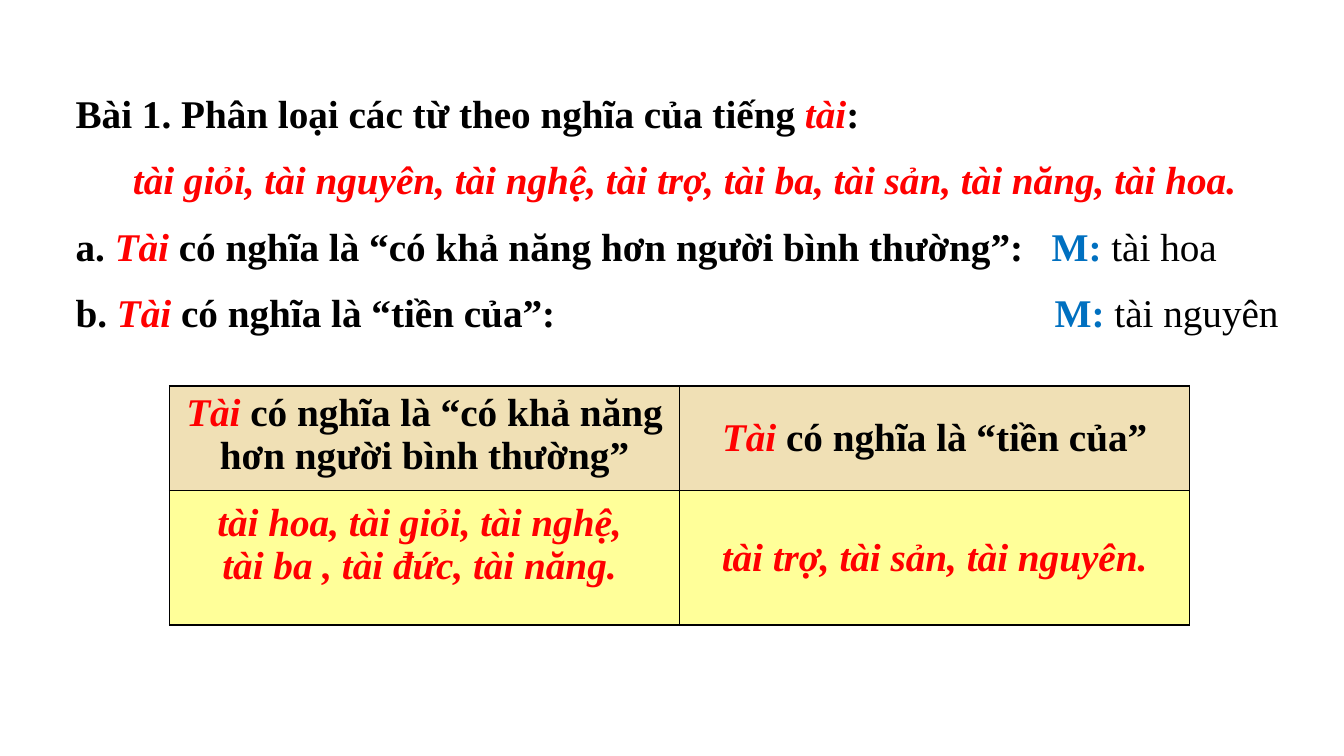
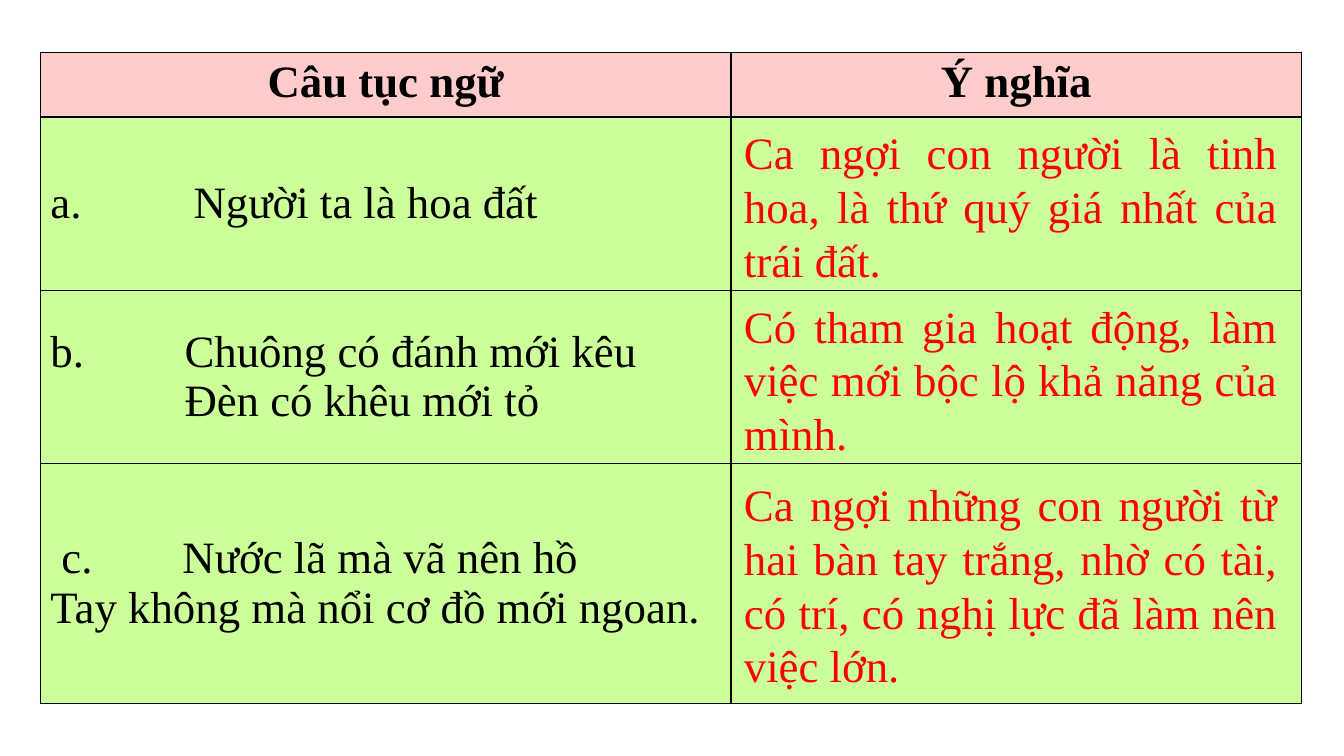
from dataclasses import dataclass

from lxml import etree
from pptx import Presentation
from pptx import util as u
from pptx.dml import color
from pptx.enum import text
from pptx.oxml import ns

EMU_PER_PX = 9144
SLIDE_SIZE = (1333, 750)
FONT = "Times New Roman"
BLACK, RED, BLUE = "000000", "FF0000", "0070C0"
SAND, YELLOW, PINK, GREEN = "F0E0B5", "FFFF99", "FFCCCC", "CCFF99"
LEFT, CENTER, JUSTIFY = text.PP_ALIGN.LEFT, text.PP_ALIGN.CENTER, text.PP_ALIGN.JUSTIFY
TOP, MIDDLE = text.MSO_ANCHOR.TOP, text.MSO_ANCHOR.MIDDLE


@dataclass(frozen=True)
class Run:
    words: str
    color: str = BLACK
    bold: bool = False
    italic: bool = False


@dataclass(frozen=True)
class Line:
    runs: tuple[Run, ...]
    align: text.PP_ALIGN = LEFT
    margin: int = 0
    indent: int = 0
    before: int = 0


@dataclass(frozen=True)
class Cell:
    fill: str
    lines: tuple[Line, ...] = ()
    anchor: text.MSO_ANCHOR = MIDDLE
    bottom: int = 5


@dataclass(frozen=True)
class Meaning:
    top: int
    height: int
    words: str


def px(length: int) -> u.Emu:
    return u.Emu(length * EMU_PER_PX)


def rgb(code: str) -> color.RGBColor:
    return color.RGBColor.from_string(code)


def bold(words: str) -> Run:
    return Run(words, bold=True)


def keyword(words: str) -> Run:
    return Run(words, RED, True, True)


def centered(*runs: Run) -> Line:
    return Line(runs, CENTER)


def hanging(margin: int, *runs: Run, start: int = 0, before: int = 0) -> Line:
    return Line(runs, margin=margin, indent=start - margin, before=before)


def write_lines(frame, lines: tuple[Line, ...], size: int) -> None:
    for index, line in enumerate(lines):
        paragraph = frame.paragraphs[0] if index == 0 else frame.add_paragraph()
        properties = paragraph._p.get_or_add_pPr()
        properties.set("marL", str(px(line.margin)))
        properties.set("indent", str(px(line.indent)))
        etree.SubElement(properties, ns.qn("a:buNone"))
        paragraph.alignment = line.align
        paragraph.space_before = u.Pt(line.before)
        paragraph.line_spacing = 1.0
        for part in line.runs:
            run = paragraph.add_run()
            run.text = part.words
            run.font.name = FONT
            run.font.size = u.Pt(size)
            run.font.bold = part.bold
            run.font.italic = part.italic
            run.font.color.rgb = rgb(part.color)


def place_text(shape, box: tuple[int, int, int, int], lines: tuple[Line, ...],
               size: int, margins: tuple[int, int] = (0, 0)) -> None:
    shape.left, shape.top, shape.width, shape.height = map(px, box)
    frame = shape.text_frame
    frame.word_wrap = True
    frame.auto_size = text.MSO_AUTO_SIZE.NONE
    frame.vertical_anchor = TOP
    frame.margin_left = frame.margin_right = px(margins[0])
    frame.margin_top = frame.margin_bottom = px(margins[1])
    write_lines(frame, lines, size)


def add_borders(cell) -> None:
    properties = cell._tc.get_or_add_tcPr()
    for side in ("lnL", "lnR", "lnT", "lnB"):
        border = etree.SubElement(properties, ns.qn(f"a:{side}"), w=str(u.Pt(1)))
        fill = etree.SubElement(border, ns.qn("a:solidFill"))
        etree.SubElement(fill, ns.qn("a:srgbClr"), val=BLACK)


def add_grid(slide, left: int, top: int, widths: tuple[int, ...],
             heights: tuple[int, ...], rows: tuple[tuple[Cell, ...], ...], size: int) -> None:
    frame = slide.shapes.add_table(len(heights), len(widths), px(left), px(top),
                                   px(sum(widths)), px(sum(heights)))
    table = frame.table
    table.first_row = table.horz_banding = False
    for column, width in zip(table.columns, widths):
        column.width = px(width)
    for row_index, (height, row) in enumerate(zip(heights, rows)):
        table.rows[row_index].height = px(height)
        for column_index, content in enumerate(row):
            cell = table.cell(row_index, column_index)
            add_borders(cell)
            cell.fill.solid()
            cell.fill.fore_color.rgb = rgb(content.fill)
            cell.vertical_anchor = content.anchor
            cell.margin_bottom = px(content.bottom)
            write_lines(cell.text_frame, content.lines, size)


def build_exercise(presentation) -> None:
    slide = presentation.slides.add_slide(presentation.slide_layouts[1])
    size, gap = 28, 14
    title = (Line((bold("Bài 1. Phân loại các từ theo nghĩa của tiếng "),
                   keyword("tài"), bold(":"))),)
    example = Run("M: ", BLUE, True)
    body = (
        centered(keyword("tài giỏi, tài nguyên, tài nghệ, tài trợ, tài ba, "
                         "tài sản, tài năng, tài hoa.")),
        hanging(968, bold("a. "), keyword("Tài "),
                bold("có nghĩa là “có khả năng hơn người bình thường”:\t"),
                example, Run("tài hoa"), before=gap),
        hanging(971, bold("b. "), keyword("Tài "), bold("có nghĩa là “tiền của”:\t"),
                example, Run("tài nguyên"), before=gap),
    )
    place_text(slide.shapes.title, (75, 89, 1198, 50), title, size)
    place_text(slide.placeholders[1], (75, 154, 1208, 190), body, size)
    rows = (
        (Cell(SAND, (centered(keyword("Tài "),
                              bold("có nghĩa là “có khả năng hơn người bình thường”")),), TOP),
         Cell(SAND, (centered(keyword("Tài "), bold("có nghĩa là “tiền của”")),))),
        (Cell(YELLOW, (centered(keyword("tài hoa, tài giỏi, tài nghệ, ")),
                       centered(keyword("tài ba , tài đức, tài năng. "))), bottom=31),
         Cell(YELLOW, (centered(keyword("tài trợ, tài sản, tài nguyên.")),))),
    )
    add_grid(slide, 168, 383, (506, 506), (104, 133), rows, size)


def build_proverbs(presentation) -> None:
    slide = presentation.slides.add_slide(presentation.slide_layouts[6])
    size = 32
    proverbs = (
        (hanging(142, Run("a.\tNgười ta là hoa đất")),),
        (hanging(133, Run("b.\tChuông có đánh mới kêu")),
         Line((Run("Đèn có khêu mới tỏ"),), margin=133)),
        (hanging(131, Run("c.\tNước lã mà vã nên hồ"), start=11),
         Line((Run("Tay không mà nổi cơ đồ mới ngoan. "),))),
    )
    header = tuple(Cell(PINK, (centered(bold(words)),), TOP)
                   for words in ("Câu tục ngữ", "Ý nghĩa"))
    rows = (header, *((Cell(GREEN, lines), Cell(GREEN)) for lines in proverbs))
    add_grid(slide, 40, 52, (685, 566), (64, 172, 172, 238), rows, size)
    meanings = (
        Meaning(119, 172, "Ca ngợi con người là tinh hoa, là thứ quý giá nhất của trái đất. "),
        Meaning(291, 172, "Có tham gia hoạt động, làm việc mới bộc lộ khả năng của mình."),
        Meaning(468, 226, "Ca ngợi những con người từ hai bàn tay trắng, nhờ có tài, "
                          "có trí, có nghị lực đã làm nên việc lớn."),
    )
    for meaning in meanings:
        box = (728, meaning.top, 549, meaning.height)
        shape = slide.shapes.add_textbox(*map(px, box))
        line = Line((Run(meaning.words, RED),), JUSTIFY)
        place_text(shape, box, (line,), size, (10, 5))


def main() -> None:
    presentation = Presentation()
    presentation.slide_width, presentation.slide_height = map(px, SLIDE_SIZE)
    build_exercise(presentation)
    build_proverbs(presentation)
    presentation.save("out.pptx")


if __name__ == "__main__":
    main()
